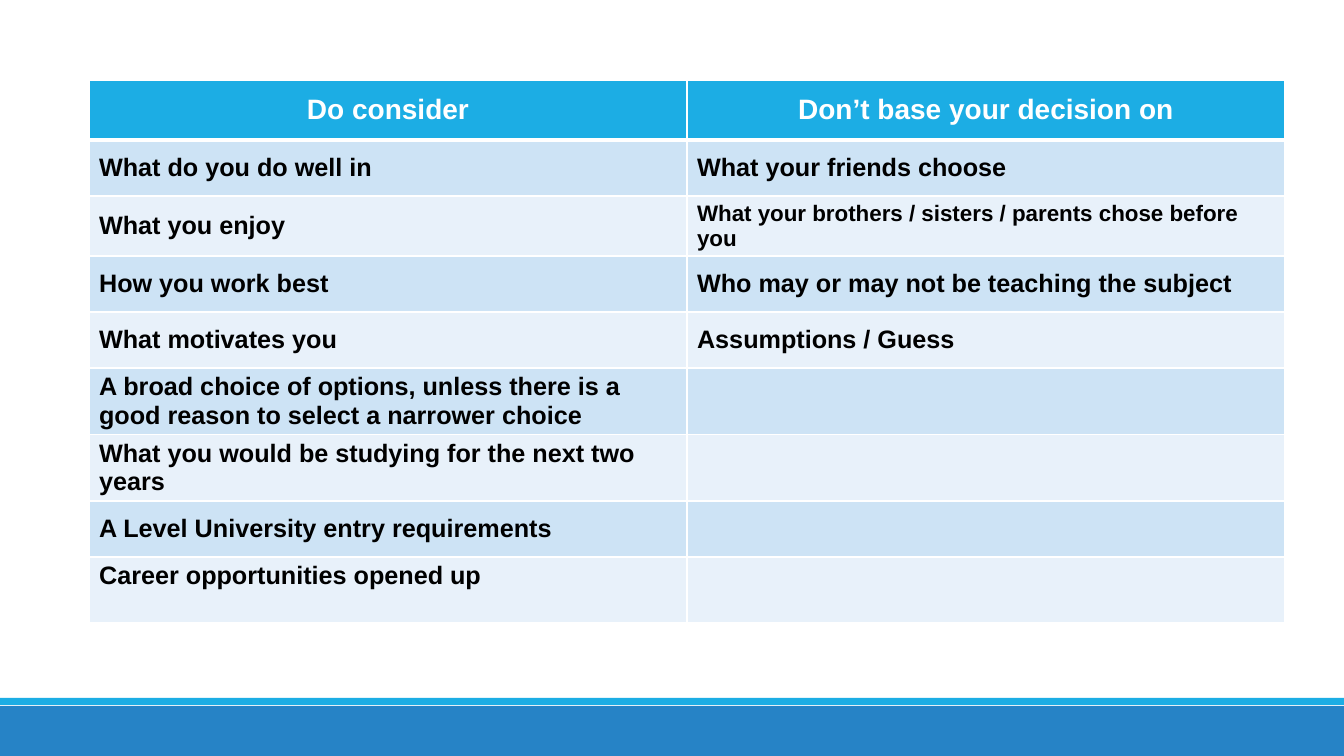
from lxml import etree
from pptx import Presentation
from pptx.dml.color import RGBColor
from pptx.enum.shapes import MSO_SHAPE
from pptx.enum.text import MSO_ANCHOR, PP_ALIGN
from pptx.oxml.ns import qn
from pptx.util import Emu, Pt

RECTANGLE = MSO_SHAPE.RECTANGLE
TOP, MIDDLE = MSO_ANCHOR.TOP, MSO_ANCHOR.MIDDLE
LEFT, CENTER = PP_ALIGN.LEFT, PP_ALIGN.CENTER

EMU_PER_PX = 914400 / 100.8
SLIDE_WIDTH, SLIDE_HEIGHT = 1344, 756
BLANK_LAYOUT = 6

CYAN, BLUE, WHITE, BLACK = "1CADE4", "2683C6", "FFFFFF", "000000"
BANDS = ("CDE3F5", "E8F1FA")
HEADER_FORMAT = {"size": Pt(20), "bold": True, "name": "Arial"}
BODY_FORMAT = {"size": Pt(18), "bold": True, "name": "Arial"}
LONG_FORMAT = {**BODY_FORMAT, "size": Pt(16)}
LONG_TEXT = "What your brothers / sisters / parents chose before you"

# Left text, right text, row height
ROWS = [
    ("Do consider", "Don’t base your decision on", 60),
    ("What do you do well in", "What your friends choose", 56),
    ("What you enjoy", LONG_TEXT, 60),
    ("How you work best", "Who may or may not be teaching the subject", 56),
    ("What motivates you", "Assumptions / Guess", 56),
    ("A broad choice of options, unless there is a good reason to select "
     "a narrower choice", "", 66),
    ("What you would be studying for the next two years", "", 66),
    ("A Level University entry requirements", "", 56),
    ("Career opportunities opened up", "", 66),
]
COLUMN_WIDTH = 598


def px(length):
    return Emu(round(length * EMU_PER_PX))


def color(value):
    return RGBColor.from_string(value)


def add_bar(page, top, height, fill):
    bar = page.shapes.add_shape(
        RECTANGLE, 0, px(top), px(SLIDE_WIDTH), px(height))
    bar.shadow.inherit = False
    bar.fill.solid()
    bar.fill.fore_color.rgb = color(fill)
    bar.line.fill.background()


def set_borders(cell, widths):
    properties = cell._tc.get_or_add_tcPr()
    for side, width in widths.items():
        line = etree.SubElement(properties, qn(f"a:ln{side}"), w=str(Pt(width)))
        fill = etree.SubElement(line, qn("a:solidFill"))
        etree.SubElement(fill, qn("a:srgbClr"), val=WHITE)


def fill_cell(cell, text, fill, borders, text_format, text_color, align, anchor):
    set_borders(cell, borders)
    cell.fill.solid()
    cell.fill.fore_color.rgb = color(fill)
    cell.vertical_anchor = anchor
    para = cell.text_frame.paragraphs[0]
    para.alignment = align
    if text:
        span = para.add_run()
        span.text = text
        for name, value in text_format.items():
            setattr(span.font, name, value)
        span.font.color.rgb = color(text_color)


def add_advice_table(page, left, top):
    height = sum(row[-1] for row in ROWS)
    table = page.shapes.add_table(
        len(ROWS), 2, px(left), px(top), px(2 * COLUMN_WIDTH), px(height)).table
    for column in table.columns:
        column.width = px(COLUMN_WIDTH)
    for index, (*texts, row_height) in enumerate(ROWS):
        table.rows[index].height = px(row_height)
        header = index == 0
        # The rule under the header is thicker than the others
        borders = {"L": 1, "R": 1, "T": 3 if index == 1 else 1,
                   "B": 3 if header else 1}
        fill = CYAN if header else BANDS[(index - 1) % 2]
        text_color = WHITE if header else BLACK
        align = CENTER if header else LEFT
        anchor = TOP if index == len(ROWS) - 1 else MIDDLE
        for column_index, text in enumerate(texts):
            text_format = HEADER_FORMAT if header else BODY_FORMAT
            if text == LONG_TEXT:
                text_format = LONG_FORMAT
            fill_cell(table.cell(index, column_index), text, fill, borders,
                      text_format, text_color, align, anchor)


def main():
    deck = Presentation()
    deck.slide_width, deck.slide_height = px(SLIDE_WIDTH), px(SLIDE_HEIGHT)
    page = deck.slides.add_slide(deck.slide_layouts[BLANK_LAYOUT])

    # Footer bars
    add_bar(page, 706, 50, BLUE)
    add_bar(page, 698, 7, CYAN)

    # Advice on choosing subjects
    add_advice_table(page, 89, 80)

    deck.save("out.pptx")


if __name__ == "__main__":
    main()
